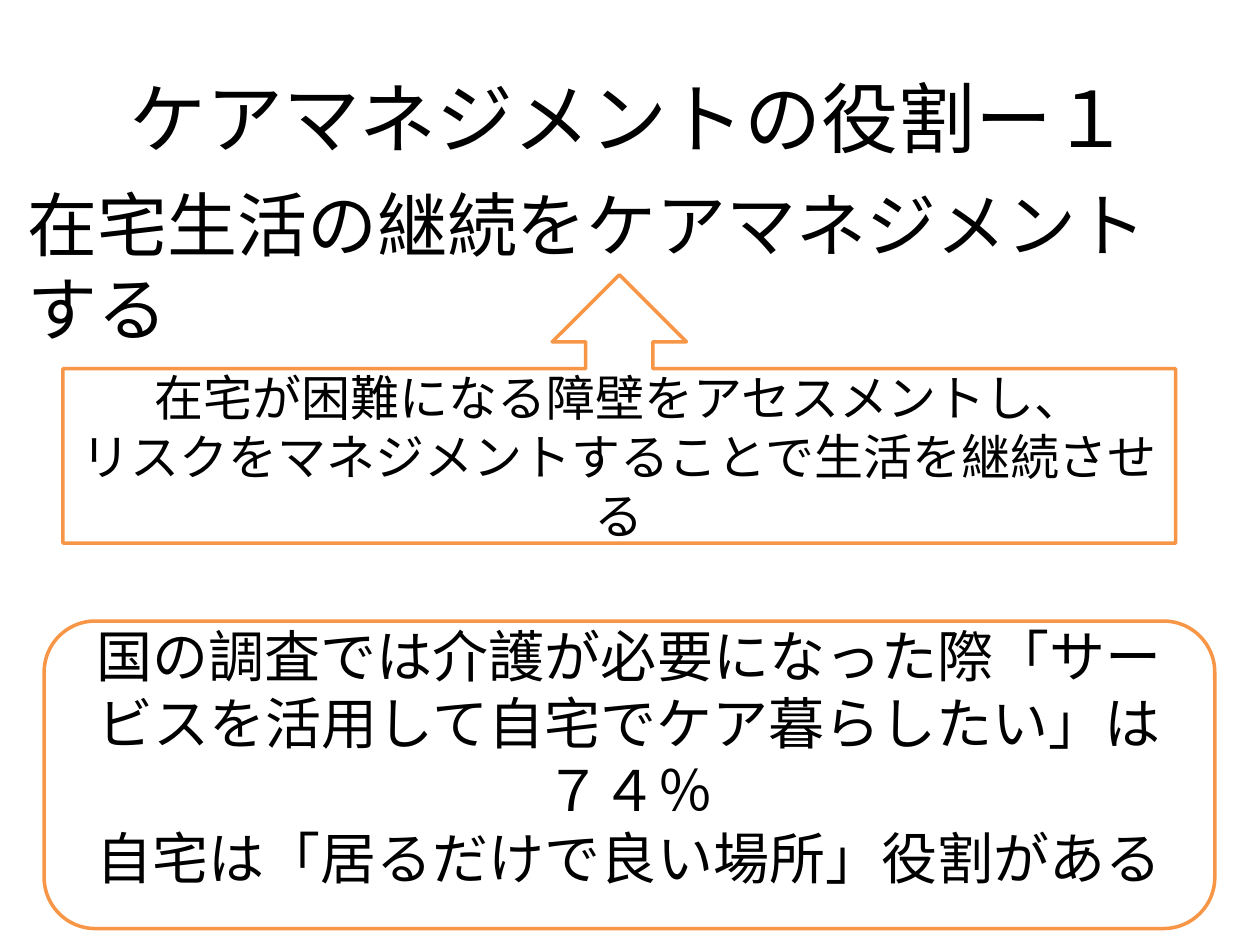
import pptx
import pptx.dml.color
import pptx.enum.shapes
import pptx.enum.text
import pptx.oxml.ns
import pptx.util
from lxml import etree

Cm = pptx.util.Cm
Pt = pptx.util.Pt
Shape = pptx.enum.shapes.MSO_SHAPE
Align = pptx.enum.text.PP_ALIGN
Anchor = pptx.enum.text.MSO_ANCHOR


def color(value):
    return pptx.dml.color.RGBColor.from_string(value)


class Page:
    """Holds the style and the current slide."""
    font = "Calibri"
    ink = "000000"
    paper = "FFFFFF"
    accent = "F79646"

    def __init__(self, deck):
        self.slide = deck.slides.add_slide(deck.slide_layouts[1])

    def set_text(self, box, lines, size, align):
        frame = box.text_frame
        frame.word_wrap = True
        frame.text = "\n".join(lines)
        for para in frame.paragraphs:
            para.alignment = align
            para.font.size = Pt(size)
            para.font.name = self.font
            para.font.color.rgb = color(self.ink)

    def place(self, box, left, top, width, height):
        box.left, box.top = Cm(left), Cm(top)
        box.width, box.height = Cm(width), Cm(height)

    def title(self, text, area, size):
        box = self.slide.shapes.title
        self.place(box, *area)
        self.set_text(box, [text], size, Align.CENTER)
        box.text_frame.vertical_anchor = Anchor.MIDDLE

    def body(self, lines, area, size):
        """Fill the body placeholder with unbulleted paragraphs."""
        box = self.slide.placeholders[1]
        self.place(box, *area)
        self.set_text(box, lines, size, Align.LEFT)
        for para in box.text_frame.paragraphs:
            properties = para._p.get_or_add_pPr()
            properties.set("marL", "0")
            properties.set("indent", "0")
            # The schema wants the bullet before the font defaults.
            bullet = etree.Element(pptx.oxml.ns.qn("a:buNone"))
            properties.insert(0, bullet)

    def panel(self, kind, lines, area, size):
        """Add an outlined shape with centred text."""
        box = self.slide.shapes.add_shape(kind, *map(Cm, area))
        box.shadow.inherit = False
        box.fill.solid()
        box.fill.fore_color.rgb = color(self.paper)
        box.line.color.rgb = color(self.accent)
        box.line.width = Pt(2)
        self.set_text(box, lines, size, Align.CENTER)
        box.text_frame.vertical_anchor = Anchor.MIDDLE
        return box


def main():
    deck = pptx.Presentation()
    deck.slide_width, deck.slide_height = Cm(25.4), Cm(19.05)
    page = Page(deck)
    page.title("ケアマネジメントの役割ー１", (1.27, 0.76, 22.86, 3.18), 44)
    page.body(["在宅生活の継続をケアマネジメントする"],
              (0.3, 3.53, 23.83, 13.49), 40)
    page.panel(Shape.UP_ARROW_CALLOUT,
               ["在宅が困難になる障壁をアセスメントし、",
                "リスクをマネジメントすることで生活を継続させる"],
               (1.27, 5.54, 22.43, 5.41), 28)
    survey = page.panel(
        Shape.ROUNDED_RECTANGLE,
        ["国の調査では介護が必要になった際「サービスを活用して自宅でケア暮らしたい」は７４％",
         "自宅は「居るだけで良い場所」役割がある"],
        (0.89, 12.52, 23.6, 6.2), 32)
    survey.text_frame.margin_top = Cm(0)
    survey.text_frame.margin_bottom = Cm(0.76)
    deck.save("out.pptx")


if __name__ == "__main__":
    main()
